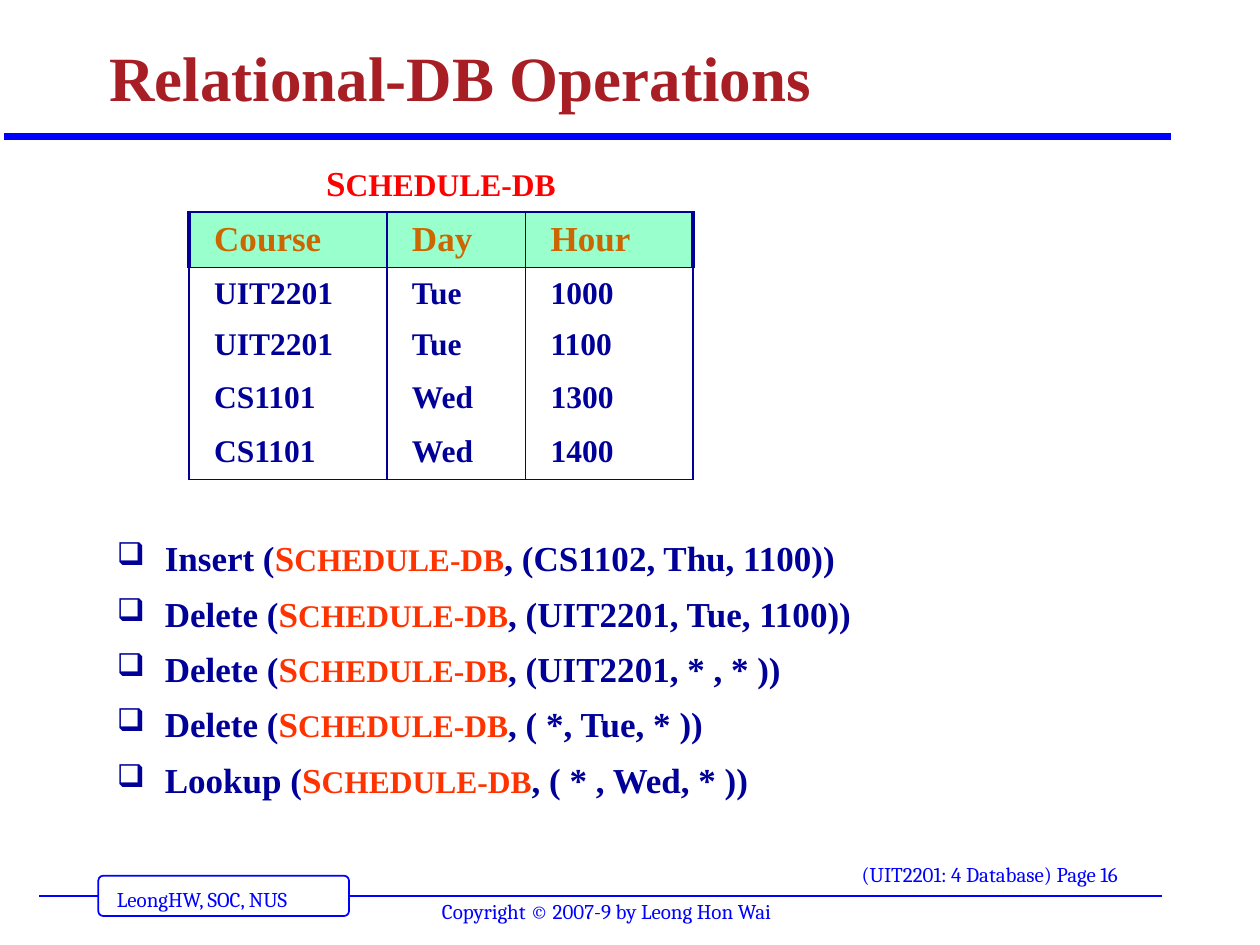
import pptx
import pptx.util
import pptx.dml.color
import pptx.oxml
import pptx.oxml.ns
import pptx.enum.text
import pptx.enum.shapes

Inches, Pt = pptx.util.Inches, pptx.util.Pt
ALIGN, ANCHOR = pptx.enum.text.PP_ALIGN, pptx.enum.text.MSO_ANCHOR
SHAPE = pptx.enum.shapes.MSO_SHAPE

# Content
TITLE = "Relational-DB Operations"
DB_NAME = ("S", "CHEDULE-DB")
HEADER = ("Course", "Day", "Hour")
SCHEDULE = [
    ("UIT2201", "Tue", "1000"),
    ("UIT2201", "Tue", "1100"),
    ("CS1101", "Wed", "1300"),
    ("CS1101", "Wed", "1400"),
]
OPERATIONS = [
    ("Insert", "(CS1102, Thu, 1100)"),
    ("Delete", "(UIT2201, Tue, 1100)"),
    ("Delete", "(UIT2201, * , * )"),
    ("Delete", "( *, Tue, * )"),
    ("Lookup", "( * , Wed, * )"),
]
FOOTERS = [
    ("LeongHW, SOC, NUS", (0.83, 6.99, 1.82, 0.3)),
    ("(UIT2201: 4 Database) Page 16", (6.74, 6.79, 2.49, 0.3)),
    ("Copyright © 2007-9 by Leong Hon Wai", (3.41, 7.08, 3.07, 0.3)),
]
RULES = [(0.31, 9.22, 7.11, 1), (0.03, 9.29, 1.08, 4)]  # left, right, y, weight

COLUMN_WIDTHS = (1.57, 1.1, 1.33)
ROW_HEIGHTS = (0.43, 0.44, 0.41, 0.4, 0.44, 0.43)
SERIF, FOOTER_FONT = "Times New Roman", "Cambria"
BLUE, NAVY, RED, ORANGE = "0000FF", "000099", "FF0000", "FF3300"
MAROON, OCHRE, MINT, WHITE = "A81E25", "CC6600", "99FFCC", "FFFFFF"

deck = pptx.Presentation()
deck.slide_width, deck.slide_height = Inches(10), Inches(7.5)
slide = deck.slides.add_slide(deck.slide_layouts[6])


def rgb(value):
    return pptx.dml.color.RGBColor.from_string(value)


def add_xml(parent, xml):
    head, tail = xml.split(" ", 1)
    parent.append(pptx.oxml.parse_xml(f"{head} {pptx.oxml.ns.nsdecls('a')} {tail}"))


def add_run(paragraph, text, *, size, color, font=SERIF, bold=True):
    run = paragraph.add_run()
    run.text = text
    run.font.name, run.font.size, run.font.bold = font, Pt(size), bold
    run.font.color.rgb = rgb(color)


def add_db_name(paragraph, color):
    for text, size in zip(DB_NAME, (20, 18)):
        add_run(paragraph, text, size=size, color=color)


def space_before_half_line(paragraph):
    add_xml(paragraph._p.get_or_add_pPr(),
            '<a:spcBef ><a:spcPct val="50000"/></a:spcBef>')


def add_text_frame(box, wrap=True, anchor=ANCHOR.TOP):
    frame = slide.shapes.add_textbox(*map(Inches, box)).text_frame
    frame.word_wrap, frame.vertical_anchor = wrap, anchor
    return frame


def set_borders(cell, weights):
    for side in "LRTB":
        weight = weights.get(side)
        paint = (f'<a:solidFill><a:srgbClr val="{NAVY}"/></a:solidFill>'
                 if weight else "<a:noFill/>")
        add_xml(cell._tc.get_or_add_tcPr(),
                f'<a:ln{side} w="{Pt(weight or 1)}">{paint}</a:ln{side}>')


# Footer rule, title rule and the footer badge
def add_rule(left, right, y, weight):
    rule = slide.shapes.add_connector(
        pptx.enum.shapes.MSO_CONNECTOR.STRAIGHT,
        Inches(left), Inches(y), Inches(right), Inches(y))
    rule.line.color.rgb, rule.line.width = rgb(BLUE), Pt(weight)
    add_xml(rule._element.spPr, "<a:effectLst />")


for rule_place in RULES:
    add_rule(*rule_place)

badge = slide.shapes.add_shape(
    SHAPE.ROUNDED_RECTANGLE, *map(Inches, (0.78, 6.95, 1.99, 0.32)))
badge.adjustments[0] = 0.125
badge.shadow.inherit = False
badge.fill.solid()
badge.fill.fore_color.rgb = rgb(WHITE)
badge.line.color.rgb, badge.line.width = rgb(BLUE), Pt(1)

for text, box in FOOTERS:
    add_run(add_text_frame(box, wrap=False).paragraphs[0], text,
            size=12, color=BLUE, font=FOOTER_FONT, bold=False)

# Title
heading = add_text_frame((0.77, 0.08, 8.5, 0.88), anchor=ANCHOR.BOTTOM).paragraphs[0]
heading.line_spacing = 0.9
add_run(heading, TITLE, size=36, color=MAROON)

# Operations list
operations = add_text_frame((0.83, 4.25, 8.33, 2.42))
for index, (verb, pattern) in enumerate(OPERATIONS):
    item = operations.add_paragraph() if index else operations.paragraphs[0]
    item.line_spacing = 0.9
    space_before_half_line(item)
    props = item._p.get_or_add_pPr()
    props.set("marL", str(Inches(0.38)))
    props.set("indent", str(-Inches(0.38)))
    add_xml(props, f'<a:buClr ><a:srgbClr val="{NAVY}"/></a:buClr>')
    add_xml(props, '<a:buSzPct val="90000"/>')
    add_xml(props, '<a:buChar char="❑"/>')
    add_run(item, f"{verb} (", size=20, color=NAVY)
    add_db_name(item, ORANGE)
    add_run(item, f", {pattern})", size=20, color=NAVY)

# Schedule table: caption row, header row, records
rows = [("",) * len(HEADER), HEADER, *SCHEDULE]
schedule = slide.shapes.add_table(
    len(rows), len(HEADER), Inches(1.5), Inches(1.25),
    Inches(sum(COLUMN_WIDTHS)), Inches(sum(ROW_HEIGHTS))).table
schedule.first_row = schedule.horz_banding = False
for column, width in zip(schedule.columns, COLUMN_WIDTHS):
    column.width = Inches(width)
for row, height in zip(schedule.rows, ROW_HEIGHTS):
    row.height = Inches(height)
schedule.cell(0, 0).merge(schedule.cell(0, len(HEADER) - 1))

last_row, last_column = len(rows) - 1, len(HEADER) - 1
for r, values in enumerate(rows):
    for c, value in enumerate(values):
        cell = schedule.cell(r, c)
        cell.margin_left = cell.margin_right = Inches(0.2)
        cell.vertical_anchor = ANCHOR.MIDDLE
        borders = {"L": 1, "R": 1} if r else {}
        if r in (1, 2):
            borders["T"] = 1
        if r in (0, 1, last_row):
            borders["B"] = 1
        if r == 1 and c == 0:
            borders["L"] = 2.25
        if r == 1 and c == last_column:
            borders["R"] = 2.25
        set_borders(cell, borders)
        if r == 1:
            cell.fill.solid()
            cell.fill.fore_color.rgb = rgb(MINT)
        else:
            cell.fill.background()
        paragraph = cell.text_frame.paragraphs[0]
        space_before_half_line(paragraph)
        if value:
            add_run(paragraph, value, size=20 if r == 1 else 18,
                    color=OCHRE if r == 1 else NAVY)

caption = schedule.cell(0, 0).text_frame.paragraphs[0]
caption.alignment = ALIGN.CENTER
add_db_name(caption, RED)

deck.save("out.pptx")
